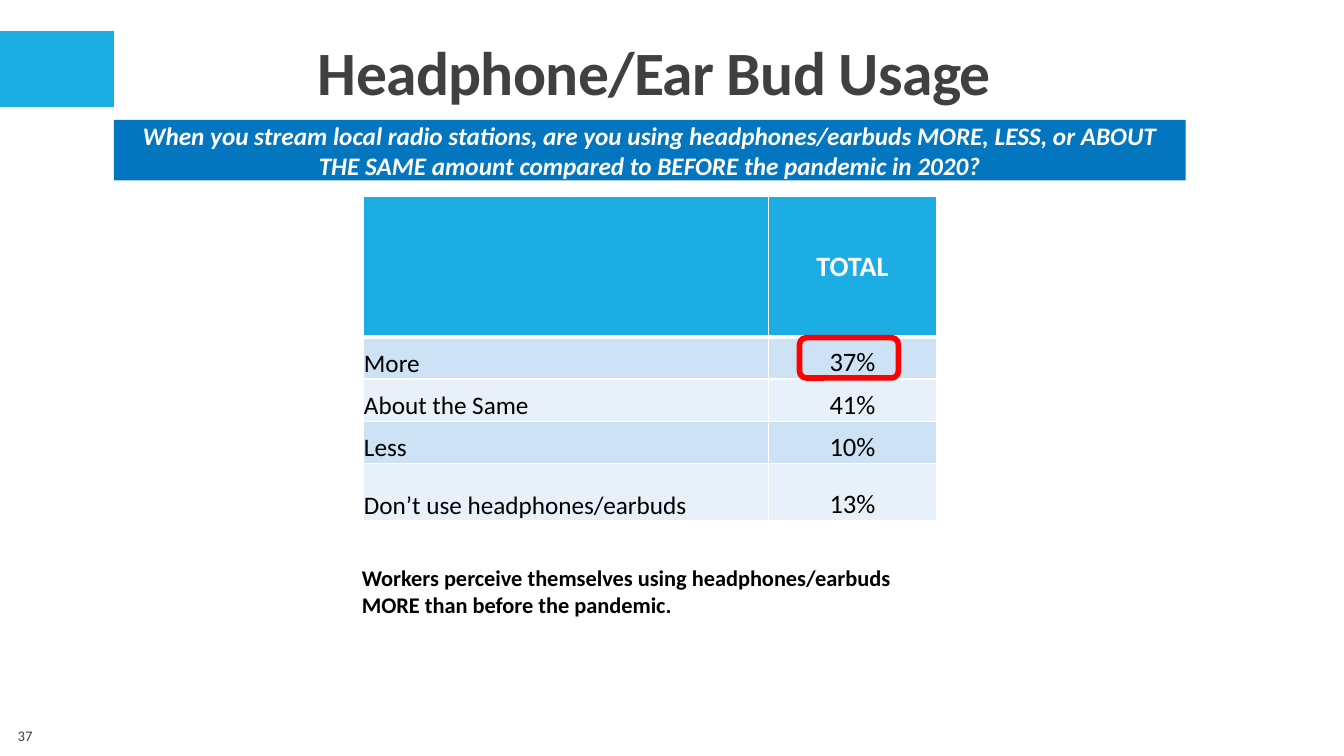
from dataclasses import dataclass

from lxml import etree
from pptx import Presentation
from pptx.dml.color import RGBColor
from pptx.enum import shapes, text
from pptx.oxml import ns
from pptx.util import Inches, Pt


@dataclass(frozen=True)
class Theme:
    font: str = "Calibri"
    accent: str = "1CADE4"
    banner: str = "0476BF"
    bands: tuple = ("CDE3F5", "E8F1FA")
    white: str = "FFFFFF"
    black: str = "000000"
    gray: str = "404040"
    highlight: str = "FF0000"
    title_size: float = 44
    header_size: float = 20
    value_size: float = 19
    body_size: float = 18
    note_size: float = 16
    number_size: float = 10.5


THEME = Theme()
ANSWERS = [("More", "37%"), ("About the Same", "41%"), ("Less", "10%"),
           ("Don’t use headphones/earbuds", "13%")]
COLUMN_WIDTHS = (4.02, 1.67)
ROW_HEIGHTS = (1.39, 0.42, 0.42, 0.42, 0.57)
LEFT, CENTER, RIGHT = text.PP_ALIGN.LEFT, text.PP_ALIGN.CENTER, text.PP_ALIGN.RIGHT
MIDDLE, BOTTOM = text.MSO_ANCHOR.MIDDLE, text.MSO_ANCHOR.BOTTOM


def color(code):
    return RGBColor.from_string(code)


def write(frame, words, size, ink, align=LEFT, bold=False, italic=False):
    """Fill a text frame with one formatted paragraph and return it."""
    frame.text = words
    frame.word_wrap = True
    para = frame.paragraphs[0]
    para.alignment = align
    for span in para.runs:
        span.font.name = THEME.font
        span.font.size = Pt(size)
        span.font.color.rgb = color(ink)
        span.font.bold = bold
        span.font.italic = italic
    return para


def add_block(page, kind, box, fill=None, line=None):
    block = page.shapes.add_shape(kind, *map(Inches, box))
    block.shadow.inherit = False
    if fill:
        block.fill.solid()
        block.fill.fore_color.rgb = color(fill)
    else:
        block.fill.background()
    if line:
        block.line.color.rgb = color(line)
        block.line.width = Pt(4)
    else:
        block.line.fill.background()
    return block


def add_title(page, box, words):
    title = page.shapes.title
    title.left, title.top, title.width, title.height = map(Inches, box)
    frame = title.text_frame
    para = write(frame, words, THEME.title_size, THEME.gray, CENTER, bold=True)
    frame.auto_size = text.MSO_AUTO_SIZE.NONE
    frame.vertical_anchor = BOTTOM
    para.line_spacing = 0.9
    para.runs[0]._r.get_or_add_rPr().set("spc", "-50")


def add_banner(page, box, words):
    banner = add_block(page, shapes.MSO_SHAPE.RECTANGLE, box, THEME.banner)
    banner.text_frame.vertical_anchor = MIDDLE
    write(banner.text_frame, words, THEME.body_size, THEME.white, CENTER,
          bold=True, italic=True)


def add_text(page, box, words, size, ink, **style):
    frame = page.shapes.add_textbox(*map(Inches, box)).text_frame
    frame.vertical_anchor = MIDDLE
    write(frame, words, size, ink, **style)


def style_cell(cell, fill, bottom_width=1, top_width=1):
    """Give a cell white borders and a solid fill."""
    properties = cell._tc.get_or_add_tcPr()
    for side, width in zip("LRTB", (1, 1, top_width, bottom_width)):
        edge = etree.SubElement(properties, ns.qn(f"a:ln{side}"), w=str(Pt(width)))
        paint = etree.SubElement(edge, ns.qn("a:solidFill"))
        etree.SubElement(paint, ns.qn("a:srgbClr"), val=THEME.white)
    cell.fill.solid()
    cell.fill.fore_color.rgb = color(fill)


def add_answer_table(page, left, top):
    """Place the table and ring its first value."""
    table = page.shapes.add_table(
        len(ROW_HEIGHTS), len(COLUMN_WIDTHS), Inches(left), Inches(top),
        Inches(sum(COLUMN_WIDTHS)), Inches(sum(ROW_HEIGHTS))).table
    for column, width in zip(table.columns, COLUMN_WIDTHS):
        column.width = Inches(width)
    for row, height in zip(table.rows, ROW_HEIGHTS):
        row.height = Inches(height)

    for cell in table.rows[0].cells:
        style_cell(cell, THEME.accent, bottom_width=3)
    header = table.cell(0, 1)
    header.vertical_anchor = MIDDLE
    write(header.text_frame, "TOTAL", THEME.header_size, THEME.white, CENTER, bold=True)

    for index, answer in enumerate(ANSWERS):
        styles = ((THEME.body_size, LEFT), (THEME.value_size, CENTER))
        for column, (words, (size, align)) in enumerate(zip(answer, styles)):
            cell = table.cell(index + 1, column)
            style_cell(cell, THEME.bands[index % 2], top_width=1 if index else 3)
            cell.margin_left = cell.margin_right = cell.margin_top = Inches(0.01)
            cell.margin_bottom = 0
            cell.vertical_anchor = BOTTOM
            write(cell.text_frame, words, size, THEME.black, align)

    ring = (left + COLUMN_WIDTHS[0] + 0.31, top + ROW_HEIGHTS[0] + 0.01, 0.98, 0.4)
    add_block(page, shapes.MSO_SHAPE.ROUNDED_RECTANGLE, ring, line=THEME.highlight)


def main():
    deck = Presentation()
    deck.slide_width, deck.slide_height = Inches(13.33), Inches(7.5)
    page = deck.slides.add_slide(deck.slide_layouts[5])
    add_block(page, shapes.MSO_SHAPE.RECTANGLE, (0, 0.31, 1.13, 0.75), THEME.accent)
    add_title(page, (0.99, 0.38, 11, 0.75), "Headphone/Ear Bud Usage")
    add_banner(page, (1.13, 1.19, 10.63, 0.6),
               "When you stream local radio stations, are you using headphones/earbuds "
               "MORE, LESS, or ABOUT THE SAME amount compared to BEFORE the pandemic in 2020?")
    add_answer_table(page, 3.6, 1.95)
    add_text(page, (3.49, 5.54, 5.8, 0.64),
             "Workers perceive themselves using headphones/earbuds MORE than before "
             "the pandemic.", THEME.note_size, THEME.black, bold=True)
    add_text(page, (0, 7.1, 0.42, 0.4), "37", THEME.number_size, THEME.gray, align=RIGHT)
    deck.save("out.pptx")


if __name__ == "__main__":
    main()
